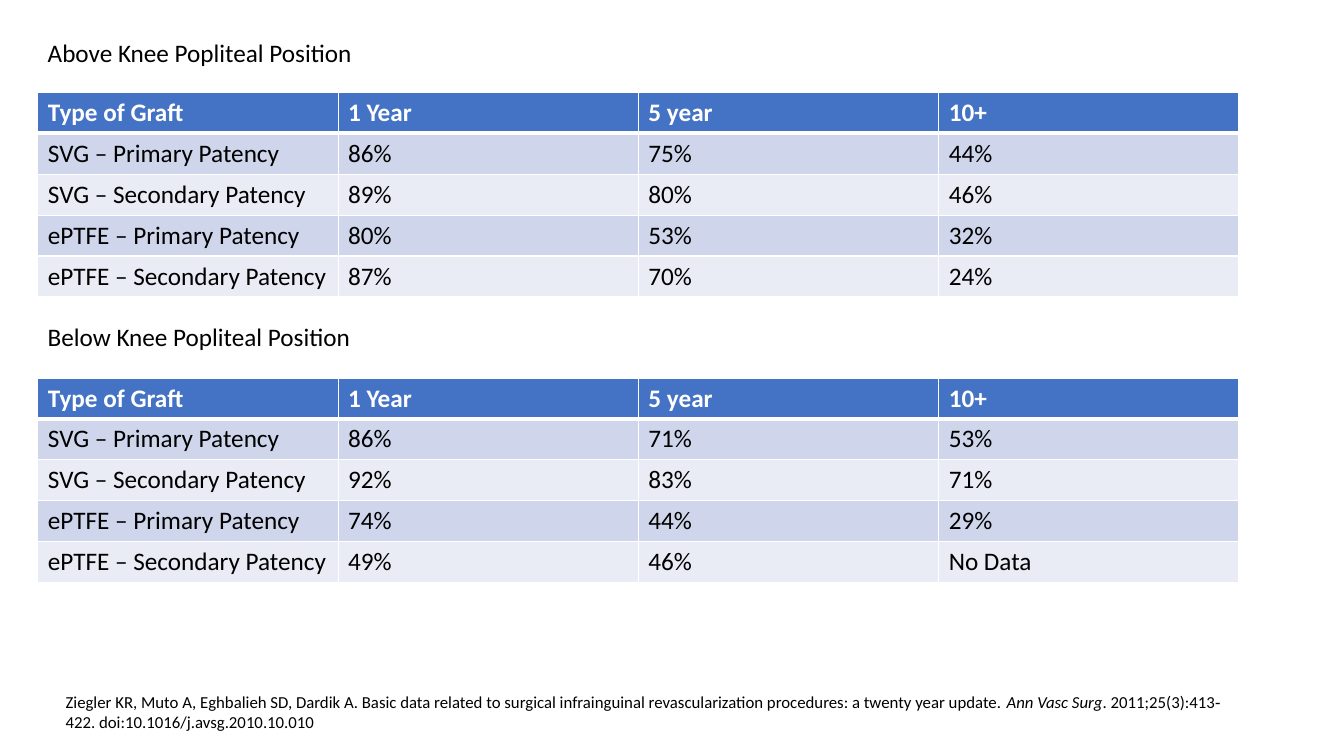
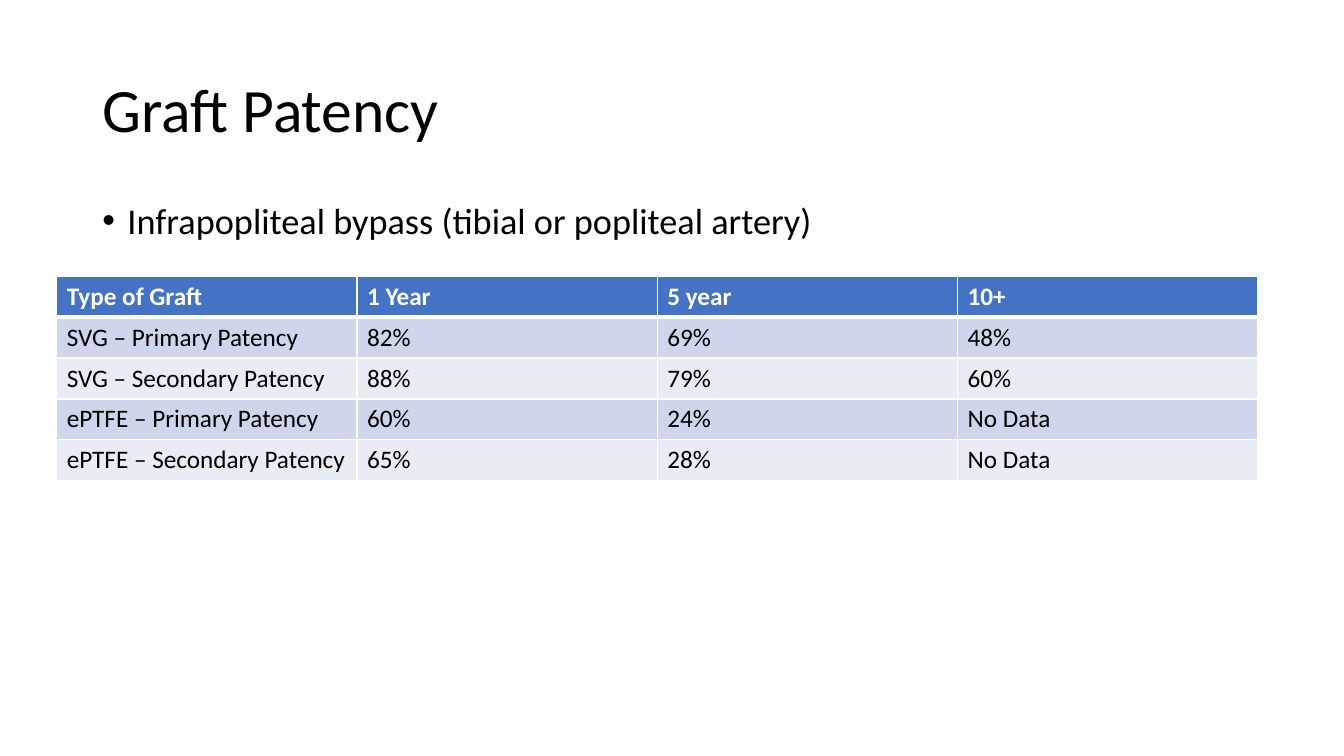
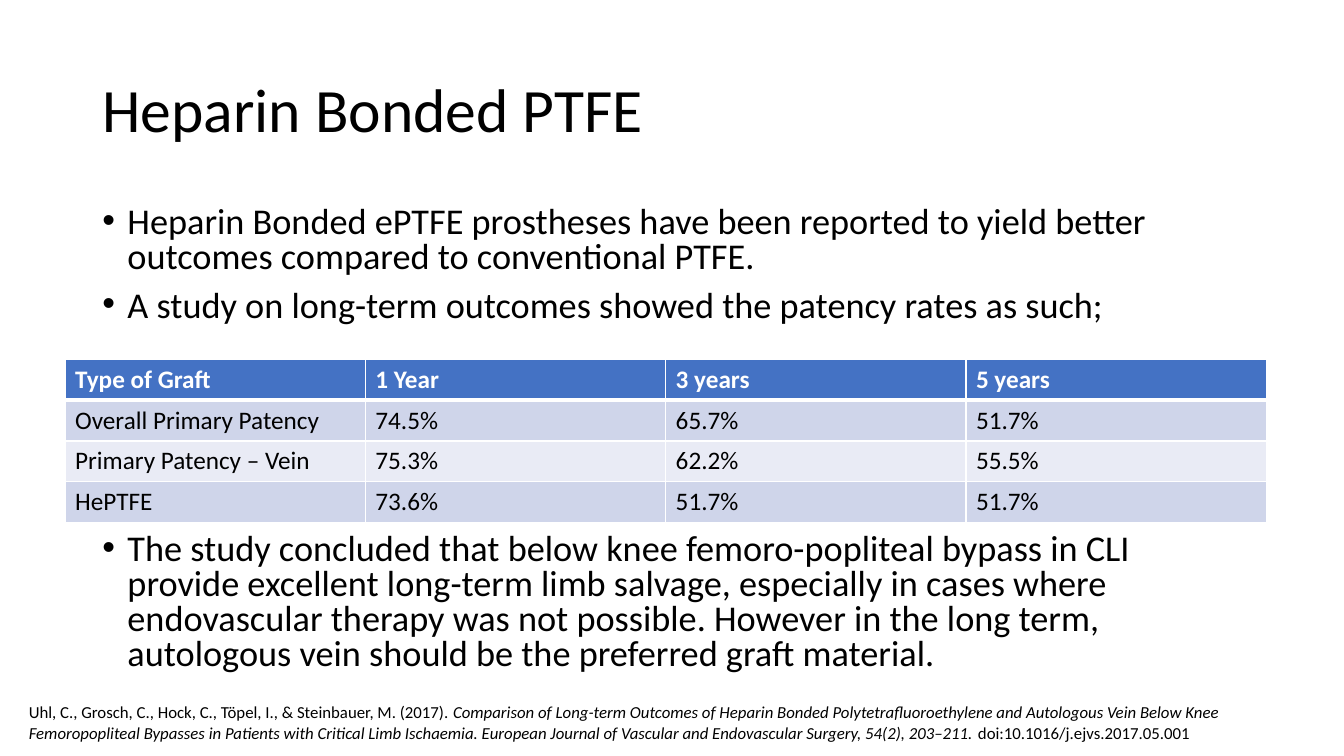
from dataclasses import dataclass
from typing import Any

import lxml.etree
import pptx
import pptx.dml.color
import pptx.enum.text
import pptx.oxml.ns
import pptx.slide
import pptx.util

PX = 9525
SLIDE_W, SLIDE_H = 1280, 720
TITLE_ONLY, BLANK = 5, 6
COL_W, ROW_H = 286, 39
BLACK, WHITE, HEADER = "000000", "FFFFFF", "4472C4"
BANDS = ("CFD5EA", "E9EBF5")
GRAFTS = ("SVG – Primary Patency", "SVG – Secondary Patency",
          "ePTFE – Primary Patency", "ePTFE – Secondary Patency")
YEARS = ("Type of Graft", "1 Year", "5 year", "10+")

TITLE_FONT = {"name": "Calibri", "size": pptx.util.Pt(44)}
BODY_FONT = {"name": "Calibri", "size": pptx.util.Pt(25.9)}
TEXT_FONT = {"name": "Calibri", "size": pptx.util.Pt(18)}
HEAD_FONT = TEXT_FONT | {"bold": True}
CITE_FONT = {"name": "Calibri", "size": pptx.util.Pt(12)}
TITLE_PARA = {"alignment": pptx.enum.text.PP_ALIGN.LEFT, "line_spacing": 0.9}
BODY_PARA = {"line_spacing": 0.8, "space_before": pptx.util.Pt(10)}


@dataclass(frozen=True)
class Box:
    x: int
    y: int
    w: int
    h: int

    def emu(self) -> tuple[int, ...]:
        return tuple(v * PX for v in (self.x, self.y, self.w, self.h))


@dataclass(frozen=True)
class Patency:
    x: int
    y: int
    rows: tuple[tuple[str, ...], ...]


@dataclass(frozen=True)
class Citation:
    box: Box
    before: str
    journal: str
    after: str


@dataclass(frozen=True)
class Bullet:
    text: str
    gap: int = 10


TITLE_BOX = Box(88, 38, 1104, 139)


def rgb(hex_color: str) -> pptx.dml.color.RGBColor:
    return pptx.dml.color.RGBColor.from_string(hex_color)


def apply(target: Any, values: dict[str, Any]) -> None:
    for key, value in values.items():
        setattr(target, key, value)


def child(parent: Any, tag: str, **attrs: str) -> Any:
    return lxml.etree.SubElement(parent, pptx.oxml.ns.qn(tag), attrs)


def add_run(p: Any, text: str, font: dict[str, Any], color: str = BLACK) -> None:
    r = p.add_run()
    r.text = text
    apply(r.font, font)
    r.font.color.rgb = rgb(color)


def add_text_frame(slide: pptx.slide.Slide, box: Box, grow: bool = True) -> Any:
    tf = slide.shapes.add_textbox(*box.emu()).text_frame
    tf.word_wrap = True
    if grow:
        tf.auto_size = pptx.enum.text.MSO_AUTO_SIZE.SHAPE_TO_FIT_TEXT
    return tf


def add_caption(slide: pptx.slide.Slide, box: Box, text: str) -> None:
    add_run(add_text_frame(slide, box).paragraphs[0], text, TEXT_FONT)


def add_citation(slide: pptx.slide.Slide, cite: Citation) -> None:
    p = add_text_frame(slide, cite.box).paragraphs[0]
    add_run(p, cite.before, CITE_FONT)
    add_run(p, cite.journal, CITE_FONT | {"italic": True})
    add_run(p, cite.after, CITE_FONT)


def add_titled_slide(prs: Any, title: str) -> pptx.slide.Slide:
    slide = prs.slides.add_slide(prs.slide_layouts[TITLE_ONLY])
    sp = slide.shapes.title
    apply(sp, dict(zip(("left", "top", "width", "height"), TITLE_BOX.emu())))
    tf = sp.text_frame
    tf.vertical_anchor = pptx.enum.text.MSO_ANCHOR.MIDDLE
    p = tf.paragraphs[0]
    apply(p, TITLE_PARA)
    add_run(p, title, TITLE_FONT)
    return slide


def add_bullets(slide: pptx.slide.Slide, height: int, bullets: tuple[Bullet, ...]) -> None:
    tf = add_text_frame(slide, Box(88, 192, 1104, height), grow=False)
    for i, bullet in enumerate(bullets):
        p = tf.add_paragraph() if i else tf.paragraphs[0]
        apply(p, BODY_PARA | {"space_before": pptx.util.Pt(bullet.gap)})
        pPr = p._p.get_or_add_pPr()
        pPr.set("marL", str(24 * PX))
        pPr.set("indent", str(-24 * PX))
        child(pPr, "a:buFont", typeface="Arial")
        child(pPr, "a:buChar", char="•")
        add_run(p, bullet.text, BODY_FONT)


def set_borders(cell: Any, top: int, bottom: int) -> None:
    tcPr = cell._tc.get_or_add_tcPr()
    for side, width in {"L": 1, "R": 1, "T": top, "B": bottom}.items():
        ln = child(tcPr, f"a:ln{side}", w=str(pptx.util.Pt(width)))
        child(child(ln, "a:solidFill"), "a:srgbClr", val=WHITE)


def add_patency(slide: pptx.slide.Slide, patency: Patency) -> None:
    n_rows, n_cols = len(patency.rows), len(patency.rows[0])
    box = Box(patency.x, patency.y, COL_W * n_cols, ROW_H * n_rows)
    table = slide.shapes.add_table(n_rows, n_cols, *box.emu()).table
    for i, row in enumerate(patency.rows):
        fill = BANDS[(i - 1) % 2] if i else HEADER
        font, color = (TEXT_FONT, BLACK) if i else (HEAD_FONT, WHITE)
        for j, text in enumerate(row):
            cell = table.cell(i, j)
            set_borders(cell, top=3 if i == 1 else 1, bottom=1 if i else 3)
            cell.fill.solid()
            cell.fill.fore_color.rgb = rgb(fill)
            add_run(cell.text_frame.paragraphs[0], text, font, color)


def graft_rows(*values: tuple[str, ...]) -> tuple[tuple[str, ...], ...]:
    return (YEARS, *((graft, *row) for graft, row in zip(GRAFTS, values)))


def build_popliteal(prs: Any) -> None:
    slide = prs.slides.add_slide(prs.slide_layouts[BLANK])
    add_caption(slide, Box(36, 31, 1164, 38), "Above Knee Popliteal Position")
    add_patency(slide, Patency(36, 88, graft_rows(
        ("86%", "75%", "44%"), ("89%", "80%", "46%"),
        ("80%", "53%", "32%"), ("87%", "70%", "24%"))))
    add_caption(slide, Box(36, 301, 1144, 38), "Below Knee Popliteal Position")
    add_patency(slide, Patency(36, 360, graft_rows(
        ("86%", "71%", "53%"), ("92%", "83%", "71%"),
        ("74%", "44%", "29%"), ("49%", "46%", "No Data"))))
    add_citation(slide, Citation(
        Box(53, 654, 1128, 48),
        "Ziegler KR, Muto A, Eghbalieh SD, Dardik A. Basic data related to surgical "
        "infrainguinal revascularization procedures: a twenty year update. ",
        "Ann Vasc Surg",
        ". 2011;25(3):413‐422. doi:10.1016/j.avsg.2010.10.010"))


def build_infrapopliteal(prs: Any) -> None:
    slide = add_titled_slide(prs, "Graft Patency")
    add_bullets(slide, 46, (Bullet("Infrapopliteal bypass (tibial or popliteal artery)"),))
    add_patency(slide, Patency(54, 263, graft_rows(
        ("82%", "69%", "48%"), ("88%", "79%", "60%"),
        ("60%", "24%", "No Data"), ("65%", "28%", "No Data"))))


def build_heparin(prs: Any) -> None:
    slide = add_titled_slide(prs, "Heparin Bonded PTFE")
    add_bullets(slide, 457, (
        Bullet("Heparin Bonded ePTFE prostheses have been reported to yield better "
               "outcomes compared to conventional PTFE."),
        Bullet("A study on long-term outcomes showed the patency rates as such;"),
        Bullet("The study concluded that below knee femoro-popliteal bypass in CLI "
               "provide excellent long-term limb salvage, especially in cases where "
               "endovascular therapy was not possible. However in the long term, "
               "autologous vein should be the preferred graft material.", gap=149)))
    add_citation(slide, Citation(
        Box(18, 664, 1253, 48),
        "Uhl, C., Grosch, C., Hock, C., Töpel, I., & Steinbauer, M. (2017). ",
        "Comparison of Long-term Outcomes of Heparin Bonded Polytetrafluoroethylene and "
        "Autologous Vein Below Knee Femoropopliteal Bypasses in Patients with Critical "
        "Limb Ischaemia. European Journal of Vascular and Endovascular Surgery, 54(2), "
        "203–211.",
        " doi:10.1016/j.ejvs.2017.05.001"))
    add_patency(slide, Patency(62, 342, (
        ("Type of Graft", "1 Year", "3 years", "5 years"),
        ("Overall Primary Patency", "74.5%", "65.7%", "51.7%"),
        ("Primary Patency – Vein", "75.3%", "62.2%", "55.5%"),
        ("HePTFE", "73.6%", "51.7%", "51.7%"))))


def main() -> None:
    prs = pptx.Presentation()
    apply(prs, {"slide_width": SLIDE_W * PX, "slide_height": SLIDE_H * PX})
    for build in (build_popliteal, build_infrapopliteal, build_heparin):
        build(prs)
    prs.save("out.pptx")


if __name__ == "__main__":
    main()
